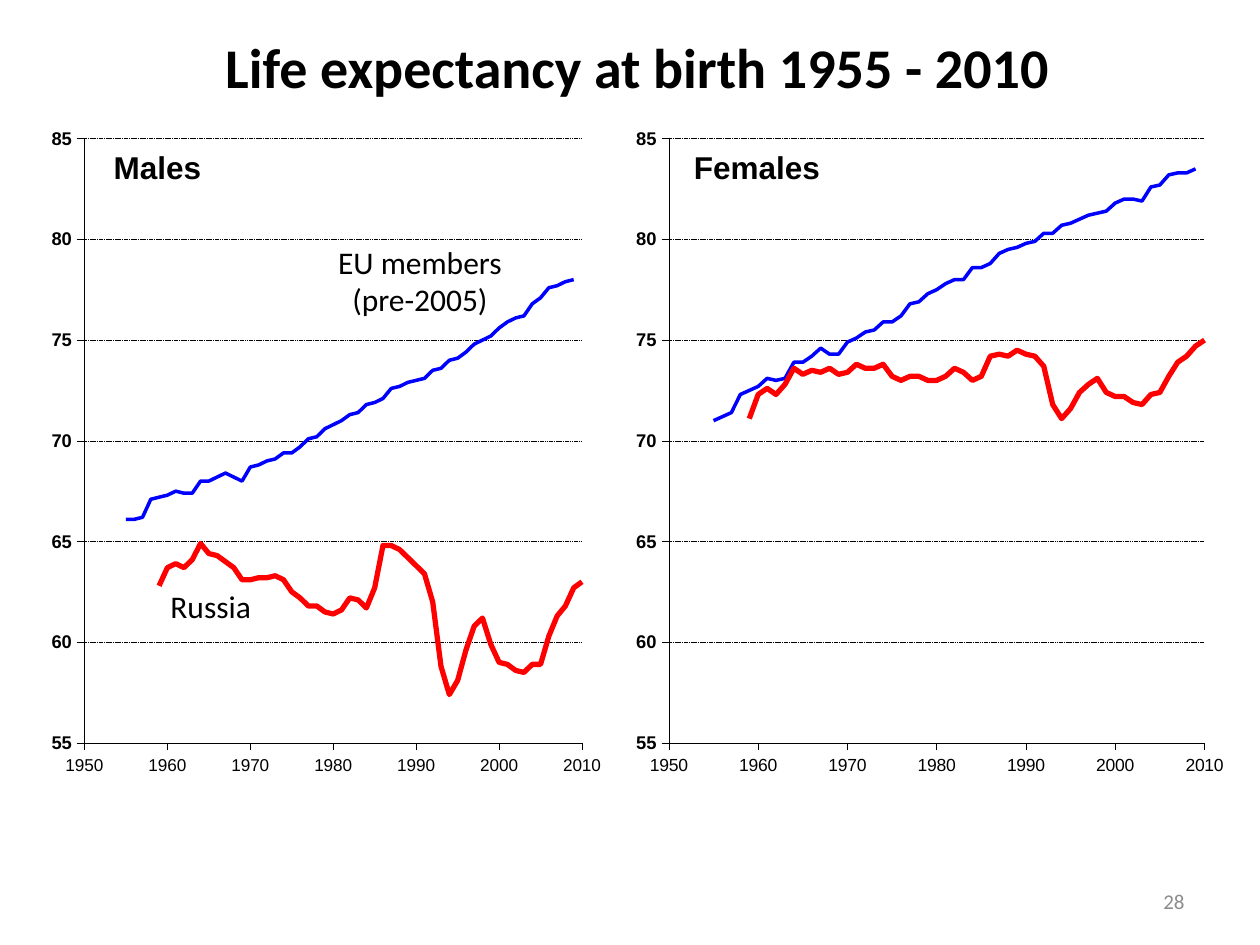
"""Build a slide comparing male and female life expectancy in Russia and the EU."""
from pptx import Presentation
from pptx import util as u
from pptx.chart.data import XyChartData
from pptx.dml.color import RGBColor
from pptx.enum import chart as charts, dml, text
from pptx.oxml import parse_xml
from pptx.oxml.ns import nsdecls, qn

PX = u.Inches(1) / 126
COLORS = {"black": "000000", "white": "FFFFFF", "russia": "FF0000", "eu": "0000FF", "number": "8C8C8C"}
YEARS = range(1955, 2011)
RUSSIA_START, EU_START = 1959, 1955

PANELS = [
    {
        "title": "Females", "box": (620, 118, 620, 767), "title_at": (0.11, 0.03), "year_size": 10, "alpha": 84000,
        "russia": [
            71.1, 72.3, 72.6, 72.3, 72.8, 73.6, 73.3, 73.5, 73.4, 73.6, 73.3, 73.4, 73.8, 73.6, 73.6, 73.8, 73.2, 73,
            73.2, 73.2, 73, 73, 73.2, 73.6, 73.4, 73, 73.2, 74.2, 74.3, 74.2, 74.5, 74.3, 74.2, 73.7, 71.8, 71.1,
            71.6, 72.4, 72.8, 73.1, 72.4, 72.2, 72.2, 71.9, 71.8, 72.3, 72.4, 73.2, 73.9, 74.2, 74.7, 75],
        "eu": [
            71, 71.2, 71.4, 72.3, 72.5, 72.7, 73.1, 73, 73.1, 73.9, 73.9, 74.2, 74.6, 74.3, 74.3, 74.9, 75.1, 75.4,
            75.5, 75.9, 75.9, 76.2, 76.8, 76.9, 77.3, 77.5, 77.8, 78, 78, 78.6, 78.6, 78.8, 79.3, 79.5, 79.6, 79.8,
            79.9, 80.3, 80.3, 80.7, 80.8, 81, 81.2, 81.3, 81.4, 81.8, 82, 82, 81.9, 82.6, 82.7, 83.2, 83.3, 83.3,
            83.5],
    },
    {
        "title": "Males", "box": (39, 118, 576, 767), "title_at": (0.12, 0.03), "year_size": 9.8, "alpha": 85000,
        "russia": [
            62.8, 63.7, 63.9, 63.7, 64.1, 64.9, 64.4, 64.3, 64, 63.7, 63.1, 63.1, 63.2, 63.2, 63.3, 63.1, 62.5, 62.2,
            61.8, 61.8, 61.5, 61.4, 61.6, 62.2, 62.1, 61.7, 62.7, 64.8, 64.8, 64.6, 64.2, 63.8, 63.4, 62, 58.8, 57.4,
            58.1, 59.6, 60.8, 61.2, 59.9, 59, 58.9, 58.6, 58.5, 58.9, 58.9, 60.3, 61.3, 61.8, 62.7, 63],
        "eu": [
            66.1, 66.1, 66.2, 67.1, 67.2, 67.3, 67.5, 67.4, 67.4, 68, 68, 68.2, 68.4, 68.2, 68, 68.7, 68.8, 69, 69.1,
            69.4, 69.4, 69.7, 70.1, 70.2, 70.6, 70.8, 71, 71.3, 71.4, 71.8, 71.9, 72.1, 72.6, 72.7, 72.9, 73, 73.1,
            73.5, 73.6, 74, 74.1, 74.4, 74.8, 75, 75.2, 75.6, 75.9, 76.1, 76.2, 76.8, 77.1, 77.6, 77.7, 77.9, 78],
    },
]


def style_font(font, name, size, color="black", bold=False):
    font.name, font.size, font.bold = name, u.Pt(size), bold
    font.color.rgb = RGBColor.from_string(COLORS[color])


def set_layout(parent, index, target="", **fractions):
    for old in parent.findall(qn("c:layout")):
        parent.remove(old)
    inner = f'<c:layoutTarget val="{target}"/>' if target else ""
    modes = "".join(f'<c:{key}Mode val="edge"/>' for key in "xy")
    values = "".join(f'<c:{key} val="{value}"/>' for key, value in fractions.items())
    parent.insert(index, parse_xml(
        f'<c:layout {nsdecls("c")}><c:manualLayout>{inner}{modes}{values}</c:manualLayout></c:layout>'))


presentation = Presentation()
presentation.slide_width, presentation.slide_height = u.Inches(10), u.Inches(7.5)
slide = presentation.slides.add_slide(presentation.slide_layouts[5])

title = slide.shapes.title
title.left, title.top, title.width, title.height = [round(n * PX) for n in (209, 26, 857, 81)]
title.text_frame.text = "Life expectancy at birth 1955 - 2010"
title.text_frame.word_wrap = False
style_font(title.text_frame.paragraphs[0].font, "Calibri", 32, bold=True)

for panel in PANELS:
    data = XyChartData(number_format="General")
    for name, key, start in (("Russia", "russia", RUSSIA_START), ("EU members (pre-2005)", "eu", EU_START)):
        series = data.add_series(name)
        known = dict(enumerate(panel[key], start))
        for year in YEARS:
            series.add_data_point(year, known.get(year))

    chart = slide.shapes.add_chart(
        charts.XL_CHART_TYPE.XY_SCATTER_LINES_NO_MARKERS, *[round(n * PX) for n in panel["box"]], data).chart
    for point in list(chart._chartSpace.iter(qn("c:pt"))):
        if point.findtext(qn("c:v")) in ("None", "", None):
            point.getparent().remove(point)
    chart.has_legend = False
    style_font(chart.font, "Arial", 10.5)
    chart.plots[0].vary_by_categories = False
    for series, key, width in zip(chart.plots[0].series, ("russia", "eu"), (3, 2)):
        series.smooth = False
        series.format.line.color.rgb = RGBColor.from_string(COLORS[key])
        series.format.line.width = u.Pt(width)

    years, ages = chart.category_axis, chart.value_axis
    years.has_major_gridlines, ages.has_major_gridlines = False, True
    for axis, low, high, step, size, bold in (
            (years, 1950, 2010, 10, panel["year_size"], False), (ages, 55, 85, 5, 10.5, True)):
        axis.minimum_scale, axis.maximum_scale, axis.major_unit = low, high, step
        axis.major_tick_mark = charts.XL_TICK_MARK.OUTSIDE
        axis.minor_tick_mark = charts.XL_TICK_MARK.NONE
        style_font(axis.tick_labels.font, "Arial", size, bold=bold)
    for line in (years.format.line, ages.format.line, ages.major_gridlines.format.line):
        line.color.rgb = RGBColor.from_string(COLORS["black"])
        line.width = u.Pt(0.25)
    ages.major_gridlines.format.line.dash_style = dml.MSO_LINE.SQUARE_DOT

    chart.has_title = True
    heading = chart.chart_title.text_frame
    heading.text = panel["title"]
    style_font(heading.paragraphs[0].font, "Arial", 18, bold=True)
    title_x, title_y = panel["title_at"]
    set_layout(chart.chart_title._element, 1, x=title_x, y=title_y)

    chart_element = chart._chartSpace.find(qn("c:chart"))
    set_layout(chart_element.find(qn("c:plotArea")), 0, "inner", x=0.079, y=0.027, w=0.864, h=0.788)
    chart_element.addnext(parse_xml(
        f'<c:spPr {nsdecls("c", "a")}><a:solidFill><a:srgbClr val="{COLORS["white"]}">'
        f'<a:alpha val="{panel["alpha"]}"/></a:srgbClr></a:solidFill><a:ln><a:noFill/></a:ln></c:spPr>'))

for lines, box, size, color, align, wrap in (
        (["Russia"], (158, 581, 107, 50), 18, "black", text.PP_ALIGN.LEFT, False),
        (["EU members", "(pre-2005)"], (325, 236, 190, 89), 18, "black", text.PP_ALIGN.CENTER, False),
        (["28"], (903, 876, 294, 50), 12, "number", text.PP_ALIGN.RIGHT, True)):
    frame = slide.shapes.add_textbox(*[round(n * PX) for n in box]).text_frame
    frame.text = "\n".join(lines)
    frame.word_wrap = wrap
    frame.vertical_anchor = text.MSO_ANCHOR.MIDDLE
    for paragraph in frame.paragraphs:
        paragraph.alignment = align
        style_font(paragraph.font, "Calibri", size, color)

presentation.save("out.pptx")
